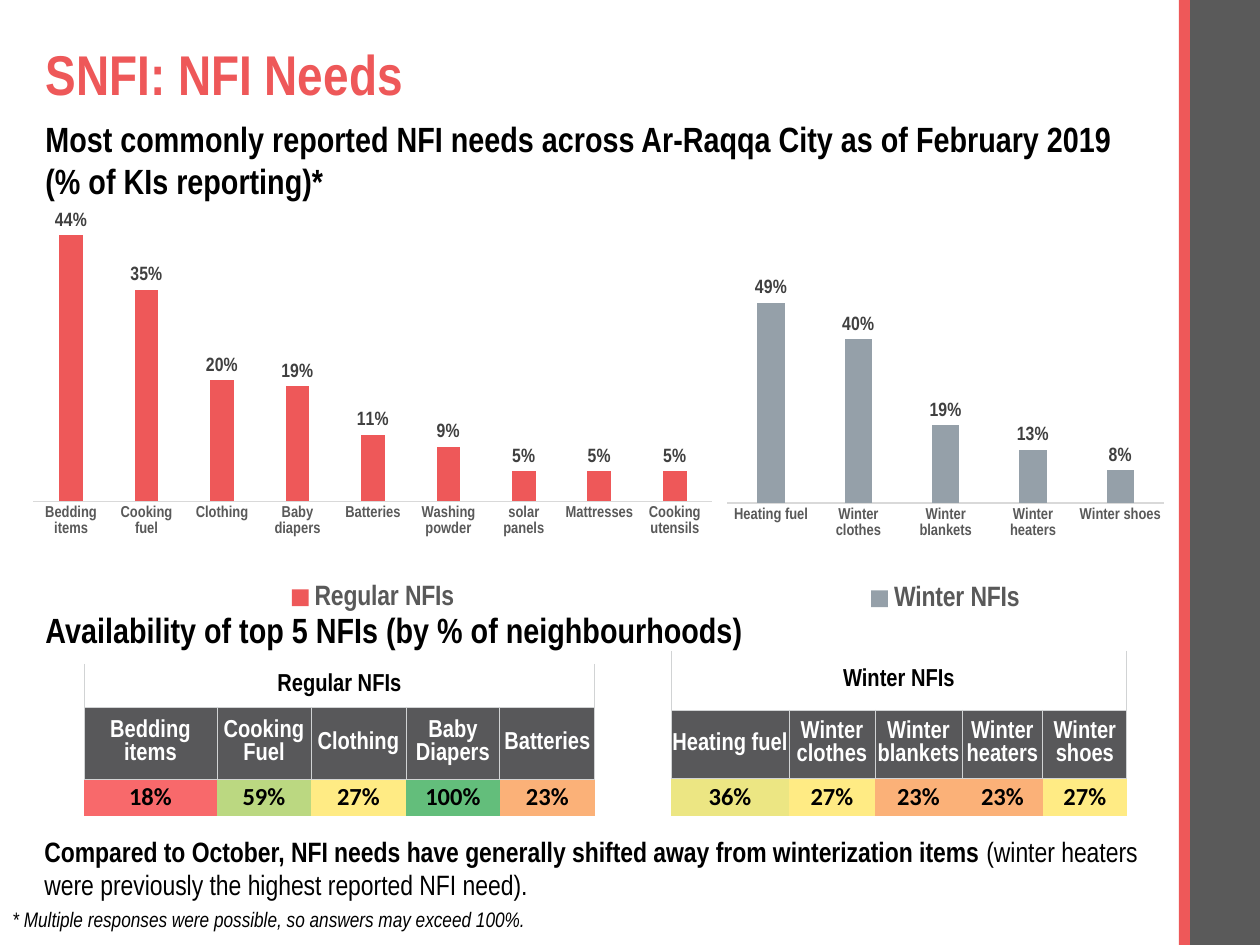
from lxml import etree
from pptx import Presentation
from pptx.chart.data import CategoryChartData
from pptx.dml.color import RGBColor
from pptx.enum.chart import XL_CHART_TYPE, XL_LABEL_POSITION, XL_LEGEND_POSITION, XL_TICK_MARK
from pptx.enum.shapes import MSO_SHAPE
from pptx.enum.text import MSO_ANCHOR, MSO_AUTO_SIZE, PP_ALIGN
from pptx.oxml import parse_xml
from pptx.oxml.ns import nsdecls, qn
from pptx.util import Pt

COLUMNS = XL_CHART_TYPE.COLUMN_CLUSTERED
OUTSIDE_END = XL_LABEL_POSITION.OUTSIDE_END
BOTTOM = XL_LEGEND_POSITION.BOTTOM
NO_TICKS = XL_TICK_MARK.NONE
RECTANGLE = MSO_SHAPE.RECTANGLE
MIDDLE = MSO_ANCHOR.MIDDLE
NO_AUTOFIT = MSO_AUTO_SIZE.NONE
LEFT, CENTER = PP_ALIGN.LEFT, PP_ALIGN.CENTER

EMU_PER_PX = 914400 / 126
FONT, VALUE_FONT = "Arial Narrow", "Calibri"
BLACK, WHITE = RGBColor(0, 0, 0), RGBColor(255, 255, 255)
CORAL = RGBColor(0xEE, 0x58, 0x59)
SIDE_GRAY = RGBColor(0x5A, 0x5A, 0x5A)
HEADER_GRAY = RGBColor(0x58, 0x58, 0x5A)
STEEL = RGBColor(0x95, 0xA0, 0xA9)
AXIS_TEXT = RGBColor(0x59, 0x59, 0x59)
LABEL_TEXT = RGBColor(0x40, 0x40, 0x40)
AXIS_LINE = RGBColor(0xD9, 0xD9, 0xD9)
BORDER = RGBColor(0xD1, 0xD3, 0xD4)
RED, ORANGE = RGBColor(0xF8, 0x69, 0x6B), RGBColor(0xFB, 0xB1, 0x78)
YELLOW, LIME = RGBColor(0xFF, 0xEB, 0x84), RGBColor(0xEC, 0xE6, 0x83)
LIGHT_GREEN, GREEN = RGBColor(0xBB, 0xD8, 0x81), RGBColor(0x63, 0xBE, 0x7B)

TITLE = "SNFI: NFI Needs"
SIDE_BARS = [((1190, 0, 70, 945), SIDE_GRAY), ((1179, 0, 11, 945), CORAL)]
# box, size, italic, runs of (text, bold)
TEXTS = [
    ((33, 111, 1126, 97), 20, False,
     [("Most commonly reported NFI needs across Ar-Raqqa City as of February 2019 "
       "(% of KIs reporting)*", True)]),
    ((33, 602, 1126, 55), 20, False,
     [("Availability of top 5 NFIs (by % of neighbourhoods)", True)]),
    ((0, 900, 1095, 38), 12, True,
     [("* Multiple responses were possible, so answers may exceed 100%.", False)]),
    ((32, 828, 1126, 81), 16, False,
     [("Compared to October, NFI needs have generally shifted away from "
       "winterization items ", True),
      ("(winter heaters were previously the highest reported NFI need).", False)]),
]
CHARTS = [
    {"name": "Regular NFIs", "box": (14, 180, 718, 436), "color": CORAL, "maximum": 0.5,
     "plot": (0.027, 0.044, 0.946, 0.693),
     "needs": [("Bedding items", 0.44), ("Cooking fuel", 0.35), ("Clothing", 0.2),
               ("Baby diapers", 0.19), ("Batteries", 0.11), ("Washing powder", 0.09),
               ("solar panels", 0.05), ("Mattresses", 0.05), ("Cooking utensils", 0.05)]},
    {"name": "Winter NFIs", "box": (708, 242, 475, 375), "color": STEEL, "maximum": 0.6,
     "plot": (0.041, 0.042, 0.919, 0.654),
     "needs": [("Heating fuel", 0.49), ("Winter clothes", 0.4), ("Winter blankets", 0.19),
               ("Winter heaters", 0.13), ("Winter shoes", 0.08)]},
]
TABLES = [
    {"name": "Regular NFIs", "corner": (84, 664), "widths": (133, 94, 95, 94, 95),
     "heights": (43, 72, 37),
     "items": [("Bedding items", "18%", RED), ("Cooking Fuel", "59%", LIGHT_GREEN),
               ("Clothing", "27%", YELLOW), ("Baby Diapers", "100%", GREEN),
               ("Batteries", "23%", ORANGE)]},
    {"name": "Winter NFIs", "corner": (671, 651), "widths": (118, 86, 87, 81, 84),
     "heights": (59, 68, 38),
     "items": [("Heating fuel", "36%", LIME), ("Winter clothes", "27%", YELLOW),
               ("Winter blankets", "23%", ORANGE), ("Winter heaters", "23%", ORANGE),
               ("Winter shoes", "27%", YELLOW)]},
]
ROW_BORDERS = ["LRB", "LRTB", "T"]


def px(length):
    return round(length * EMU_PER_PX)


def emu_box(box):
    return [px(length) for length in box]


def set_font(font, size, color, bold=True, name=FONT):
    font.name, font.size, font.bold = name, Pt(size), bold
    font.color.rgb = color


def add_text(slide, box, size, italic, runs):
    frame = slide.shapes.add_textbox(*emu_box(box)).text_frame
    frame.word_wrap = True
    paragraph = frame.paragraphs[0]
    for text, bold in runs:
        run = paragraph.add_run()
        run.text = text
        set_font(run.font, size, BLACK, bold)
        run.font.italic = italic


def place_plot(chart, fractions):
    """Fix the inner plot area as fractions of the chart frame."""
    plot_area = chart._chartSpace.chart.plotArea
    for old_layout in plot_area.findall(qn("c:layout")):
        plot_area.remove(old_layout)
    layout = etree.Element(qn("c:layout"))
    manual = etree.SubElement(layout, qn("c:manualLayout"))
    settings = [("layoutTarget", "inner"), ("xMode", "edge"), ("yMode", "edge")]
    settings += zip("xywh", fractions)
    for tag, value in settings:
        etree.SubElement(manual, qn(f"c:{tag}")).set("val", str(value))
    plot_area.insert(0, layout)


def add_needs_chart(slide, content):
    categories, values = zip(*content["needs"])
    data = CategoryChartData(number_format="0%")
    data.categories = categories
    data.add_series(content["name"], values)
    chart = slide.shapes.add_chart(COLUMNS, *emu_box(content["box"]), data).chart
    set_font(chart.font, 10, BLACK, False)
    chart.has_title = False
    chart.has_legend = True
    chart.legend.position = BOTTOM
    chart.legend.include_in_layout = False
    set_font(chart.legend.font, 16, AXIS_TEXT)

    category_axis, value_axis = chart.category_axis, chart.value_axis
    category_axis.major_tick_mark = NO_TICKS
    category_axis.format.line.color.rgb = AXIS_LINE
    category_axis.format.line.width = Pt(0.75)
    set_font(category_axis.tick_labels.font, 9, AXIS_TEXT)
    value_axis.visible = False
    value_axis.has_major_gridlines = False
    value_axis.minimum_scale, value_axis.maximum_scale = 0, content["maximum"]

    plot = chart.plots[0]
    plot.gap_width, plot.overlap, plot.vary_by_categories = 219, -27, False
    plot.series[0].format.fill.solid()
    plot.series[0].format.fill.fore_color.rgb = content["color"]
    plot.has_data_labels = True
    labels = plot.data_labels
    labels.show_value, labels.position = True, OUTSIDE_END
    labels.number_format, labels.number_format_is_linked = "0%", False
    set_font(labels.font, 11, LABEL_TEXT)
    place_plot(chart, content["plot"])


def format_cell(cell, text, fill, color, font_name, borders):
    properties = cell._tc.get_or_add_tcPr()
    for side in "LRTB":
        paint = (f'<a:solidFill><a:srgbClr val="{BORDER}"/></a:solidFill>'
                 if side in borders else "<a:noFill/>")
        properties.append(parse_xml(
            f'<a:ln{side} {nsdecls("a")} w="{Pt(0.5)}">{paint}</a:ln{side}>'))
    cell.fill.solid()
    cell.fill.fore_color.rgb = fill
    cell.margin_left = cell.margin_right = cell.margin_top = cell.margin_bottom = 0
    cell.vertical_anchor = MIDDLE
    cell.text = text
    paragraph = cell.text_frame.paragraphs[0]
    paragraph.alignment = CENTER
    set_font(paragraph.font, 14, color, name=font_name)


def add_availability_table(slide, content):
    widths, heights, items = content["widths"], content["heights"], content["items"]
    box = (*content["corner"], sum(widths), sum(heights))
    table = slide.shapes.add_table(len(heights), len(widths), *emu_box(box)).table
    for column, width in zip(table.columns, widths):
        column.width = px(width)
    for row, height in zip(table.rows, heights):
        row.height = px(height)
    table.cell(0, 0).merge(table.cell(0, len(widths) - 1))
    for index, (item, share, shade) in enumerate(items):
        column_cells = [(content["name"] if index == 0 else "", WHITE, BLACK, FONT),
                        (item, HEADER_GRAY, WHITE, FONT),
                        (share, shade, BLACK, VALUE_FONT)]
        for row, (cell_content, borders) in enumerate(zip(column_cells, ROW_BORDERS)):
            format_cell(table.cell(row, index), *cell_content, borders)


def main():
    presentation = Presentation()
    presentation.slide_width, presentation.slide_height = px(1260), px(945)
    slide = presentation.slides.add_slide(presentation.slide_layouts[5])
    for box, color in SIDE_BARS:
        bar = slide.shapes.add_shape(RECTANGLE, *emu_box(box))
        bar.shadow.inherit = False
        bar.fill.solid()
        bar.fill.fore_color.rgb = color
        bar.line.fill.background()

    title = slide.shapes.title
    title.left, title.top, title.width, title.height = emu_box((33, 31, 1095, 93))
    title.text_frame.text = TITLE
    title.text_frame.auto_size = NO_AUTOFIT
    title.text_frame.vertical_anchor = MIDDLE
    paragraph = title.text_frame.paragraphs[0]
    paragraph.alignment, paragraph.line_spacing = LEFT, 0.9
    set_font(paragraph.font, 32, CORAL)

    for text in TEXTS:
        add_text(slide, *text)
    for content in CHARTS:
        add_needs_chart(slide, content)
    for content in TABLES:
        add_availability_table(slide, content)
    presentation.save("out.pptx")


if __name__ == "__main__":
    main()
